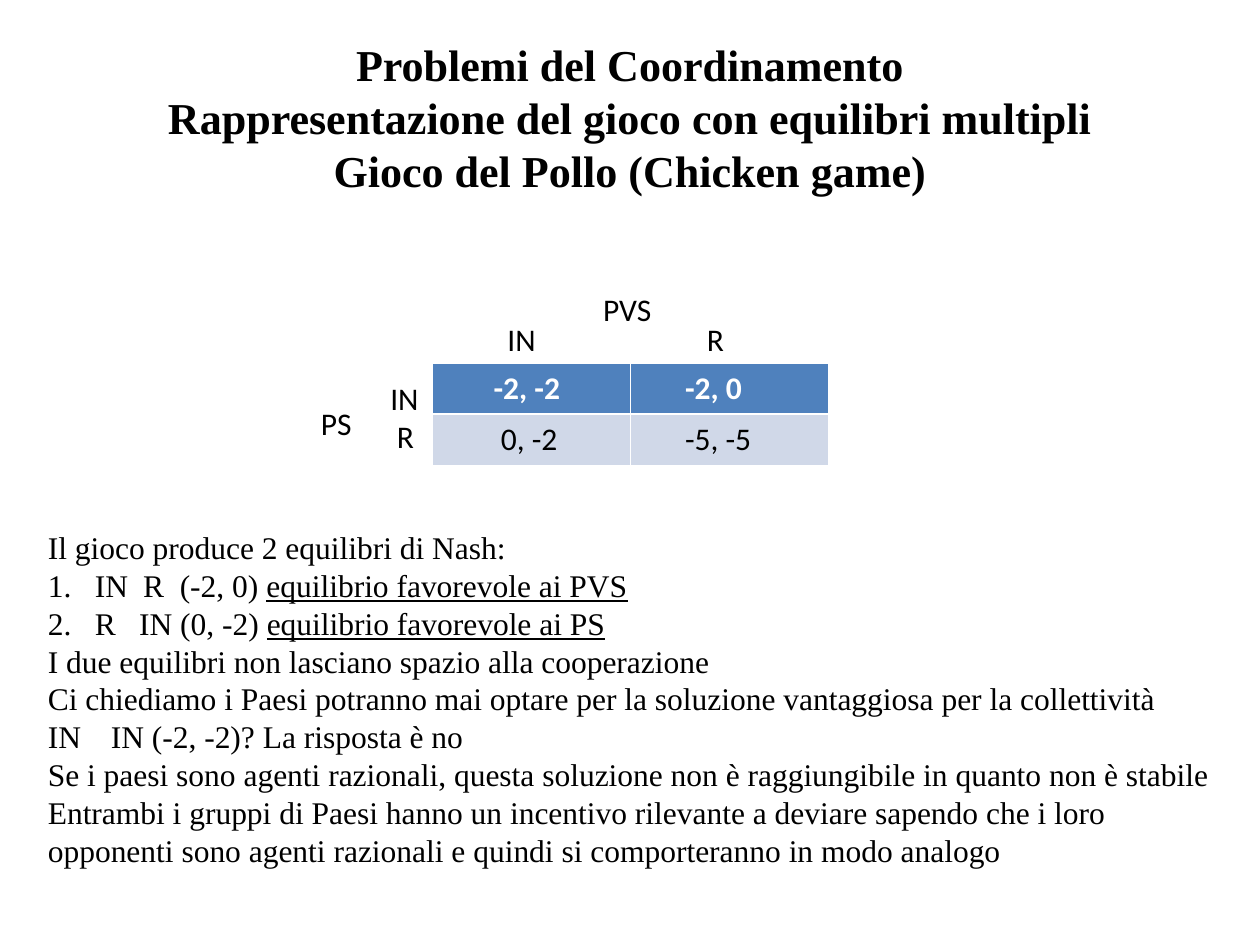
"""Build the slide on the Chicken game with its payoff table."""
from dataclasses import dataclass

from lxml import etree
from pptx import Presentation
from pptx.dml.color import RGBColor
from pptx.enum.text import MSO_ANCHOR, MSO_AUTO_SIZE, PP_ALIGN
from pptx.oxml.ns import qn
from pptx.util import Cm, Pt

MID, TOP = MSO_ANCHOR.MIDDLE, MSO_ANCHOR.TOP
LEFT, CENTER = PP_ALIGN.LEFT, PP_ALIGN.CENTER
FIXED = MSO_AUTO_SIZE.NONE
SANS, SERIF = "Calibri", "Times New Roman"
BLACK, WHITE, BLUE, PALE = "000000", "FFFFFF", "4F81BD", "D0D8E8"
TEXT = {"name": SANS, "size": Pt(18), "bold": False}
HEAD = TEXT | {"bold": True}
BODY = TEXT | {"name": SERIF}
TITLE = HEAD | {"name": SERIF, "size": Pt(25.2)}


@dataclass
class Label:
    text: str
    x: float
    y: float
    wide: float = 2


@dataclass
class Cell:
    text: str
    pad: float


@dataclass
class Line:
    text: str
    under: str = ""
    tabs: tuple = ()
    item: bool = False


LABELS = [
    Label("R", 7.75, 8.28),
    Label("IN", 7.62, 7.52),
    Label("PS", 6.22, 8.03),
    Label("IN\tR", 9.98, 6.32, 6.5),
    Label("PVS", 11.91, 5.72),
]
GRID = [
    [Cell("-2, -2", 1.24), Cell("-2, 0", 1.1)],
    [Cell("0, -2", 1.39), Cell("-5, -5", 1.1)],
]
LINES = [
    Line("Il gioco produce 2 equilibri di Nash:"),
    Line("IN\tR\t(-2, 0) ", "equilibrio favorevole ai PVS", (1.92, 2.66), True),
    Line("R\tIN (0, -2) ", "equilibrio favorevole ai PS", (1.84,), True),
    Line("I due equilibri non lasciano spazio alla cooperazione"),
    Line("Ci chiediamo i Paesi potranno mai optare per la soluzione "
         "vantaggiosa per la collettività"),
    Line("IN\tIN (-2, -2)? La risposta è no", tabs=(0.99,)),
    Line("Se i paesi sono agenti razionali, questa soluzione non è "
         "raggiungibile in quanto non è stabile"),
    Line("Entrambi i gruppi di Paesi hanno un incentivo rilevante a deviare "
         "sapendo che i loro opponenti sono agenti razionali e quindi si "
         "comporteranno in modo analogo"),
]


def tint(fill, hue: str) -> None:
    """Give a fill one solid colour."""
    fill.solid()
    fill.fore_color.rgb = RGBColor.from_string(hue)


def style(part, look: dict, hue: str = BLACK) -> None:
    """Set the font of each run in a paragraph."""
    for run in part.runs:
        for key, val in look.items():
            setattr(run.font, key, val)
        tint(run.font.fill, hue)


def place(shape, x: float, y: float, wide: float, high: float) -> None:
    """Move and size a shape in centimetres."""
    for key, val in {"left": x, "top": y, "width": wide, "height": high}.items():
        setattr(shape, key, Cm(val))


def add_tabs(part, stops: tuple) -> None:
    """Add left tab stops to a paragraph."""
    tabs = etree.SubElement(part._p.get_or_add_pPr(), qn("a:tabLst"))
    for stop in stops:
        etree.SubElement(tabs, qn("a:tab"), pos=str(Cm(stop)), algn="l")


def add_label(slide, label: Label) -> None:
    """Draw one strategy or player label."""
    box = slide.shapes.add_textbox(
        Cm(label.x), Cm(label.y), Cm(label.wide), Cm(1.02))
    box.text_frame.word_wrap = True
    part = box.text_frame.paragraphs[0]
    part.text = label.text
    if "\t" in label.text:
        add_tabs(part, (4.02,))
    style(part, TEXT)


def add_grid(slide, grid: list) -> None:
    """Draw the payoff table."""
    table = slide.shapes.add_table(
        2, 2, Cm(8.71), Cm(7.32), Cm(8), Cm(2.04)).table
    for row, cells in enumerate(grid):
        look, hue, back = [(HEAD, WHITE, BLUE), (TEXT, BLACK, PALE)][row]
        for col, item in enumerate(cells):
            cell = table.cell(row, col)
            cell.text = item.text
            cell.margin_left = Cm(item.pad)
            tint(cell.fill, back)
            style(cell.text_frame.paragraphs[0], look, hue)


def add_line(part, line: Line) -> None:
    """Fill one paragraph of the body."""
    part.space_before = Pt(0)
    part.alignment = LEFT
    props = part._p.get_or_add_pPr()
    dent = Cm(0.95) if line.item else 0
    props.set("marL", str(dent))
    props.set("indent", str(-dent))
    if line.item:
        etree.SubElement(props, qn("a:buFont"), typeface="+mj-lt")
        etree.SubElement(props, qn("a:buAutoNum"), type="arabicPeriod")
    else:
        etree.SubElement(props, qn("a:buNone"))
    if line.tabs:
        add_tabs(part, line.tabs)
    part.add_run().text = line.text
    if line.under:
        part.add_run().text = line.under
    style(part, BODY)
    if line.under:
        part.runs[-1].font.underline = True


def main() -> None:
    """Build and save the deck."""
    deck = Presentation()
    deck.slide_width, deck.slide_height = Cm(25.4), Cm(19.05)
    slide = deck.slides.add_slide(deck.slide_layouts[1])
    title, body = slide.placeholders
    place(title, 1.27, 0.76, 22.86, 3.18)
    place(body, 0.71, 10.52, 24, 7.19)
    for shape, side in ((title, MID), (body, TOP)):
        frame = shape.text_frame
        frame.word_wrap = True
        frame.auto_size = FIXED
        frame.vertical_anchor = side
    part = title.text_frame.paragraphs[0]
    part.text = ("Problemi del Coordinamento\v"
                 "Rappresentazione del gioco con equilibri multipli\v"
                 "Gioco del Pollo (Chicken game)")
    part.alignment = CENTER
    style(part, TITLE)
    add_grid(slide, GRID)
    for label in LABELS:
        add_label(slide, label)
    frame = body.text_frame
    for spot, line in enumerate(LINES):
        add_line(frame.add_paragraph() if spot else frame.paragraphs[0], line)
    deck.save("out.pptx")


if __name__ == "__main__":
    main()
